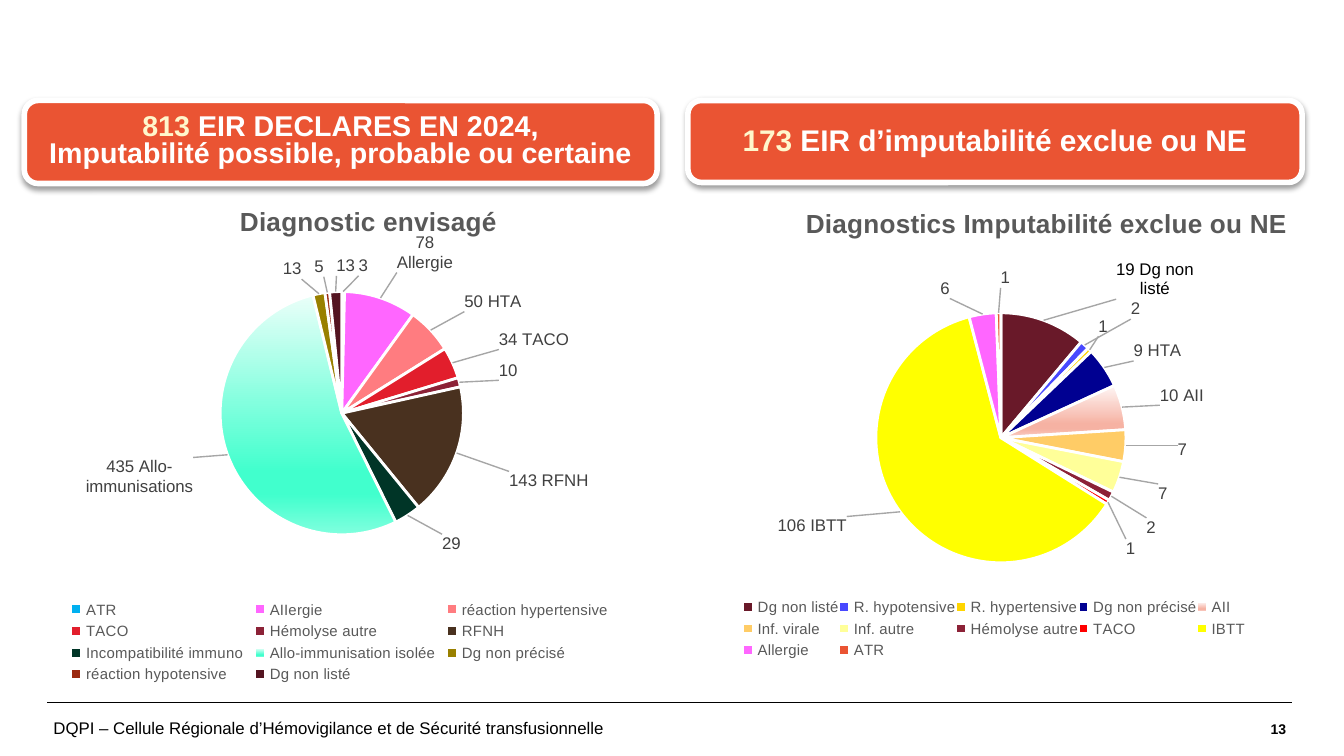
from dataclasses import dataclass
from typing import Any, Optional, Union

from lxml.etree import SubElement
from pptx import Presentation
from pptx.chart.data import CategoryChartData
from pptx.dml.color import RGBColor
from pptx.enum.chart import XL_CHART_TYPE as ChartType, XL_LABEL_POSITION as LabelPosition
from pptx.enum.chart import XL_LEGEND_POSITION as LegendPosition
from pptx.enum.shapes import MSO_CONNECTOR as Connector, MSO_SHAPE as Shape
from pptx.enum.text import MSO_ANCHOR as Anchor, PP_ALIGN as Align
from pptx.oxml.ns import qn
from pptx.util import Cm, Pt

Box = tuple[float, float, float, float]
Stops = tuple[tuple[int, str], ...]


@dataclass(frozen=True)
class Theme:
    """Colours and type sizes of the slide."""
    font: str = "Arial"
    black: str = "000000"
    white: str = "FFFFFF"
    banner: str = "EA5433"
    figure: str = "FFF7CC"
    grey: str = "595959"
    label: str = "404040"
    leader: str = "A6A6A6"
    title_size: float = 14
    label_size: float = 9
    legend_size: float = 8
    footer_size: float = 9
    number_size: float = 7.5


@dataclass(frozen=True)
class Slice:
    """One slice, with the shift of its label in centimetres."""
    name: str
    value: int
    fill: Union[str, Stops]
    shift: tuple[float, float]
    label: Optional[str] = None
    label_color: str = Theme.label


@dataclass(frozen=True)
class Pie:
    """A pie chart; the inner layouts are fractions of its box."""
    title: str
    box: Box
    title_at: tuple[float, float]
    plot: Box
    legend: Box
    slices: tuple[Slice, ...]


@dataclass(frozen=True)
class Banner:
    """A rounded heading: a figure, then the lines of its wording."""
    box: Box
    figure: str
    lines: tuple[str, ...]
    size: float
    spacing: float


THEME = Theme()
MINT: Stops = ((0, "EAFFF9"), (74, "41FFCD"), (83, "41FFCD"), (100, "80FFDE"))
SALMON: Stops = ((0, "FEF6F5"), (74, "F6B2A3"), (83, "F6B2A3"), (100, "F9CCC2"))

PIES = (
    Pie("Diagnostic envisagé", (0.23, 3.4, 12.4, 9.6), (0.34, 0.04),
        (0.317, 0.22, 0.371, 0.479), (0.08, 0.82, 0.84, 0.18), (
            Slice("ATR", 3, "00B0F0", (0.38, -0.15)),
            Slice("AIIergie", 78, "FF66FF", (0.26, -0.34), "78\nAllergie"),
            Slice("réaction hypertensive", 50, "FF7C80", (0.53, -0.25), "50 HTA"),
            Slice("TACO", 34, "E21E2C", (0.74, -0.19), "34 TACO"),
            Slice("Hémolyse autre", 10, "8C2237", (0.6, 0)),
            Slice("RFNH", 143, "49311F", (0.85, 0.3), "143 RFNH"),
            Slice("Incompatibilité immuno", 29, "003527", (0.57, 0.23)),
            Slice("Allo-immunisation isolée", 435, MINT, (-0.51, 0), "435 Allo-immunisations"),
            Slice("Dg non précisé", 13, "998000", (-0.3, -0.13)),
            Slice("réaction hypotensive", 5, "9B2910", (-0.05, -0.15)),
            Slice("Dg non listé", 13, "541421", (0.2, -0.15)))),
    Pie("Diagnostics Imputabilité exclue ou NE", (12.7, 3.63, 12.19, 8.92), (0.2, 0.02),
        (0.316, 0.256, 0.388, 0.53), (0.11, 0.85, 0.78, 0.15), (
            Slice("Dg non listé", 19, "691929", (1.32, -0.26), "19 Dg non\nlisté", THEME.black),
            Slice("R. hypotensive", 2, "4848FF", (0.77, -0.38)),
            Slice("R. hypertensive", 1, "FFD500", (0.06, -0.15)),
            Slice("Dg non précisé", 9, "000091", (0.43, -0.04), "9 HTA"),
            Slice("AII", 10, SALMON, (0.57, 0), "10 AII"),
            Slice("Inf. virale", 7, "FFCC66", (0.83, 0.06)),
            Slice("Inf. autre", 7, "FFFF99", (0.59, 0.08)),
            Slice("Hémolyse autre", 2, "8C2237", (0.53, 0.34)),
            Slice("TACO", 1, "FF0000", (0.21, 0.62)),
            Slice("IBTT", 106, "FFFF00", (-0.89, 0), "106 IBTT"),
            Slice("Allergie", 6, "FF66FF", (-0.6, -0.15)),
            Slice("ATR", 1, "EA5433", (0.13, -0.32)))),
)
BANNERS = (
    Banner((0.46, 1.9, 11.96, 1.57), "813",
           (" EIR DECLARES EN 2024,", "Imputabilité possible, probable ou certaine"), 15.3, 0.8),
    Banner((13, 1.9, 11.61, 1.55), "173", (" EIR d’imputabilité exclue ou NE",), 16, 0.9),
)


def lengths(box: Box) -> list[Cm]:
    """Turn a box in centimetres into slide lengths."""
    return [Cm(length) for length in box]


def apply(target: Any, values: dict[str, Any]) -> None:
    """Set each attribute of the target."""
    for name, value in values.items():
        setattr(target, name, value)


def style_font(font: Any, size: float, color: str, bold: bool = False) -> None:
    """Give a font its face, size, weight and colour."""
    apply(font, {"name": THEME.font, "size": Pt(size), "bold": bold})
    font.color.rgb = RGBColor.from_string(color)


def style_line(line: Any, color: str, width: float) -> None:
    """Give a line its colour and width."""
    line.color.rgb = RGBColor.from_string(color)
    line.width = Pt(width)


def add_element(parent: Any, tag: str, **attributes: Any) -> Any:
    """Append a child element with its attributes."""
    return SubElement(parent, qn(tag), {name: str(value) for name, value in attributes.items()})


def set_layout(parent: Any, index: int, **values: Any) -> None:
    """Place a chart part by fractions of the chart."""
    for old in parent.findall(qn("c:layout")):
        parent.remove(old)
    layout = add_element(parent, "c:layout")
    manual = add_element(layout, "c:manualLayout")
    for name, value in values.items():
        add_element(manual, f"c:{name}", val=value)
    parent.insert(index, layout)


def box_layout(box: Box) -> dict[str, Any]:
    """Describe a whole box as layout values."""
    return {"xMode": "edge", "yMode": "edge", **dict(zip("xywh", box))}


def fill_slice(point: Any, part: Slice, series_element: Any) -> None:
    """Fill a slice with a plain colour or a vertical gradient."""
    style_line(point.format.line, THEME.white, 1.5)
    fill = point.format.fill
    if isinstance(part.fill, str):
        fill.solid()
        fill.fore_color.rgb = RGBColor.from_string(part.fill)
        return
    fill.gradient()
    fill.gradient_angle = 270
    stops = next(series_element.iter(qn("a:gsLst")))
    for old in list(stops):
        stops.remove(old)
    for position, color in part.fill:
        add_element(add_element(stops, "a:gs", pos=position * 1000), "a:srgbClr", val=color)


def label_slice(label: Any, part: Slice, series_element: Any, box: Box) -> None:
    """Write a slice label and shift it away from the pie."""
    if part.label:
        label.text_frame.text = part.label
        for paragraph in label.text_frame.paragraphs:
            for run in paragraph.runs:
                style_font(run.font, THEME.label_size, part.label_color)
    else:
        style_font(label.font, THEME.label_size, part.label_color)
    label.position = LabelPosition.OUTSIDE_END
    element = list(series_element.iter(qn("c:dLbl")))[-1]
    set_layout(element, 1, x=round(part.shift[0] / box[2], 4), y=round(part.shift[1] / box[3], 4))


def add_pie(slide: Any, pie: Pie) -> None:
    """Draw a pie chart with title, legend and labels."""
    data = CategoryChartData()
    data.categories = [part.name for part in pie.slices]
    data.add_series(pie.title, [part.value for part in pie.slices])
    chart = slide.shapes.add_chart(ChartType.PIE, *lengths(pie.box), data).chart
    style_font(chart.font, 10, THEME.black)
    apply(chart, {"has_title": True, "has_legend": True})
    frame = chart.chart_title.text_frame
    frame.text = pie.title
    style_font(frame.paragraphs[0].runs[0].font, THEME.title_size, THEME.grey, True)
    apply(chart.legend, {"position": LegendPosition.BOTTOM, "include_in_layout": False})
    style_font(chart.legend.font, THEME.legend_size, THEME.grey)
    plot = chart.plots[0]
    plot.vary_by_categories = True
    series = plot.series[0]
    labels = series.data_labels
    apply(labels, {"show_value": True, "position": LabelPosition.OUTSIDE_END})
    style_font(labels.font, THEME.label_size, THEME.label)
    for index, part in enumerate(pie.slices):
        point = series.points[index]
        fill_slice(point, part, series._element)
        label_slice(point.data_label, part, series._element, pie.box)
    group = series._element.find(qn("c:dLbls"))
    if group.find(qn("c:showLeaderLines")) is None:
        add_element(group, "c:showLeaderLines")
    group.find(qn("c:showLeaderLines")).set("val", "1")
    properties = add_element(add_element(group, "c:leaderLines"), "c:spPr")
    outline = add_element(properties, "a:ln", w=Pt(0.75))
    add_element(add_element(outline, "a:solidFill"), "a:srgbClr", val=THEME.leader)
    root = chart.element
    set_layout(next(root.iter(qn("c:title"))), 1, xMode="edge", yMode="edge",
               x=pie.title_at[0], y=pie.title_at[1])
    set_layout(next(root.iter(qn("c:plotArea"))), 0, layoutTarget="inner", **box_layout(pie.plot))
    set_layout(next(root.iter(qn("c:legend"))), 1, **box_layout(pie.legend))


def clear_margins(frame: Any) -> None:
    """Wrap a frame, centre it vertically and drop its insets."""
    sides = ("left", "right", "top", "bottom")
    apply(frame, {"word_wrap": True, "vertical_anchor": Anchor.MIDDLE,
                  **{f"margin_{side}": 0 for side in sides}})


def add_run(paragraph: Any, text: str, size: float, color: str, bold: bool = False) -> None:
    """Append styled text to a paragraph."""
    run = paragraph.add_run()
    run.text = text
    style_font(run.font, size, color, bold)


def add_banner(slide: Any, banner: Banner) -> None:
    """Draw a rounded banner with a soft shadow."""
    shape = slide.shapes.add_shape(Shape.ROUNDED_RECTANGLE, *lengths(banner.box))
    shape.fill.solid()
    shape.fill.fore_color.rgb = RGBColor.from_string(THEME.banner)
    style_line(shape.line, THEME.white, 3)
    shape.shadow.inherit = False
    effects = shape._element.spPr.find(qn("a:effectLst"))
    shadow = add_element(effects, "a:outerShdw", blurRad=Pt(3.1), dist=Pt(1.6), dir=5400000, rotWithShape=0)
    add_element(add_element(shadow, "a:srgbClr", val=THEME.black), "a:alpha", val=38000)
    frame = shape.text_frame
    clear_margins(frame)
    for index, line in enumerate(banner.lines):
        paragraph = frame.add_paragraph() if index else frame.paragraphs[0]
        apply(paragraph, {"alignment": Align.CENTER, "line_spacing": banner.spacing})
        if not index:
            add_run(paragraph, banner.figure, banner.size, THEME.figure, True)
        add_run(paragraph, line, banner.size, THEME.white, True)


def add_footer(slide: Any) -> None:
    """Draw the footer rules, slide number and department name."""
    for left in (0.89, 0.99):
        rule = slide.shapes.add_connector(Connector.STRAIGHT, *lengths((left, 13.28, left + 23.42, 13.28)))
        style_line(rule.line, THEME.black, 0.8)
        add_element(rule._element.spPr, "a:effectLst")
    number = slide.shapes.add_textbox(*lengths((20.55, 13.28, 3.76, 0.99))).text_frame
    clear_margins(number)
    number.paragraphs[0].alignment = Align.RIGHT
    add_run(number.paragraphs[0], "13", THEME.number_size, THEME.black, True)
    department = slide.shapes.add_textbox(*lengths((0.76, 13.44, 13.97, 0.64))).text_frame
    department.word_wrap = True
    add_run(department.paragraphs[0],
            "DQPI – Cellule Régionale d’Hémovigilance et de Sécurité transfusionnelle",
            THEME.footer_size, THEME.black)


def main() -> None:
    """Build and save the slide."""
    presentation = Presentation()
    apply(presentation, {"slide_width": Cm(25.4), "slide_height": Cm(14.29)})
    slide = presentation.slides.add_slide(presentation.slide_layouts[6])
    add_footer(slide)
    for pie, banner in zip(PIES, BANNERS):
        add_pie(slide, pie)
        add_banner(slide, banner)
    presentation.save("out.pptx")


if __name__ == "__main__":
    main()
